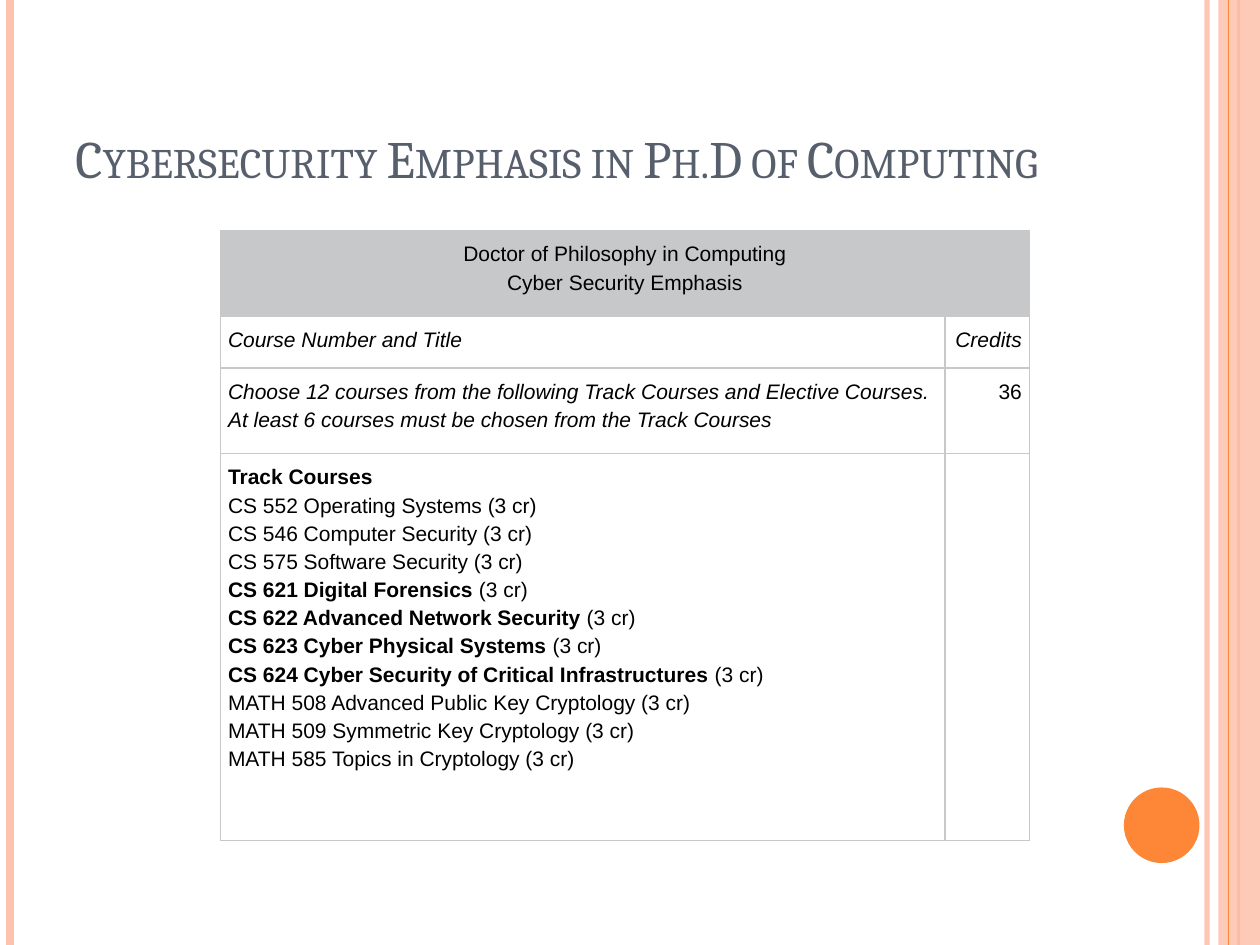
"""Build the slide on the cybersecurity emphasis of the doctoral programme."""
from pptx import Presentation
from pptx.dml.color import RGBColor
from pptx.enum.shapes import MSO_CONNECTOR, MSO_SHAPE
from pptx.enum.text import MSO_ANCHOR, PP_ALIGN
from pptx.oxml.ns import qn
from pptx.util import Inches, Pt
from lxml.etree import SubElement

COLORS = {
    "peach": "FEC3AE",
    "orange": "FE8637",
    "slate": "575F6D",
    "gray": "C6C8CA",
    "black": "000000",
}
HEADING = ["Doctor of Philosophy in Computing", "Cyber Security Emphasis"]
CHOICE = ("Choose 12 courses from the following Track Courses and Elective Courses. "
          "At least 6 courses must be chosen from the Track Courses")
COURSES = [
    ("CS 552 Operating Systems", False),
    ("CS 546 Computer Security", False),
    ("CS 575 Software Security", False),
    ("CS 621 Digital Forensics", True),
    ("CS 622 Advanced Network Security", True),
    ("CS 623 Cyber Physical Systems", True),
    ("CS 624 Cyber Security of Critical Infrastructures", True),
    ("MATH 508 Advanced Public Key Cryptology", False),
    ("MATH 509 Symmetric Key Cryptology", False),
    ("MATH 585 Topics in Cryptology", False),
]


def rgb(name):
    return RGBColor.from_string(COLORS[name])


def set_alpha(fill_xml, percent):
    SubElement(fill_xml.find(".//" + qn("a:srgbClr")), qn("a:alpha"), val=str(percent * 1000))


def add_rule(slide, x, color, width, alpha=100):
    line = slide.shapes.add_connector(
        MSO_CONNECTOR.STRAIGHT, Inches(x), 0, Inches(x), Inches(7.5))
    line.line.color.rgb = rgb(color)
    line.line.width = Pt(width)
    sp_pr = line._element.spPr
    if alpha < 100:
        set_alpha(sp_pr, alpha)
    SubElement(sp_pr, qn("a:effectLst"))


def add_block(slide, kind, box, color, alpha=100):
    sp = slide.shapes.add_shape(kind, *map(Inches, box))
    sp.shadow.inherit = False
    sp.fill.solid()
    sp.fill.fore_color.rgb = rgb(color)
    sp.line.fill.background()
    if alpha < 100:
        set_alpha(sp._element.spPr, alpha)


def add_run(p, text, size=12, font="Arial", color="black", bold=False, italic=False):
    r = p.add_run()
    r.text = text
    r.font.size = Pt(size)
    r.font.name = font
    r.font.color.rgb = rgb(color)
    r.font.bold = bold
    r.font.italic = italic
    return r


def add_title(slide, text):
    tb = slide.shapes.add_textbox(Inches(0.5), Inches(0.3), Inches(8.17), Inches(1.25))
    tf = tb.text_frame
    tf.word_wrap = True
    tf.vertical_anchor = MSO_ANCHOR.BOTTOM
    r = add_run(tf.paragraphs[0], text, 30, "Cambria", "slate")
    r.font._element.set("cap", "small")


def style_cell(cell, fill=None):
    cell.margin_left = cell.margin_right = Inches(0.06)
    cell.margin_top = cell.margin_bottom = Inches(0.06)
    tc_pr = cell._tc.get_or_add_tcPr()
    for side in ("lnL", "lnR", "lnT", "lnB"):
        ln = SubElement(tc_pr, qn("a:" + side), w=str(Pt(1)))
        solid = SubElement(ln, qn("a:solidFill"))
        SubElement(solid, qn("a:srgbClr"), val=COLORS["gray"])
    if fill:
        cell.fill.solid()
        cell.fill.fore_color.rgb = rgb(fill)
    else:
        cell.fill.background()


def fill_cell(cell, paragraphs, align=PP_ALIGN.LEFT):
    tf = cell.text_frame
    for i, runs in enumerate(paragraphs):
        p = tf.add_paragraph() if i else tf.paragraphs[0]
        p.alignment = align
        p.line_spacing = 1.2
        for text, style in runs:
            add_run(p, text, **style)


def course_runs(name, bold):
    if bold:
        return [(name + " ", {"bold": True}), ("(3 cr)", {})]
    return [(name + " (3 cr)", {})]


def add_course_table(slide):
    frame = slide.shapes.add_table(
        4, 2, Inches(1.75), Inches(1.83), Inches(6.42), Inches(4.84))
    table = frame.table
    table.first_row = table.horz_banding = False
    for col, width in zip(table.columns, (5.75, 0.67)):
        col.width = Inches(width)
    for row, height in zip(table.rows, (0.68, 0.41, 0.68, 3.07)):
        row.height = Inches(height)
    for i, row in enumerate(table.rows):
        for cell in row.cells:
            style_cell(cell, None if i else "gray")
    table.cell(0, 0).merge(table.cell(0, 1))

    italic = {"italic": True}
    tracks = [[("Track Courses", {"bold": True})]]
    tracks += [course_runs(*course) for course in COURSES]
    fill_cell(table.cell(0, 0), [[(text, {})] for text in HEADING], PP_ALIGN.CENTER)
    fill_cell(table.cell(1, 0), [[("Course Number and Title", italic)]])
    fill_cell(table.cell(1, 1), [[("Credits", italic)]], PP_ALIGN.RIGHT)
    fill_cell(table.cell(2, 0), [[(CHOICE, italic)]])
    fill_cell(table.cell(2, 1), [[("36", {})]], PP_ALIGN.RIGHT)
    fill_cell(table.cell(3, 0), tracks)


def main():
    prs = Presentation()
    prs.slide_width, prs.slide_height = Inches(10), Inches(7.5)
    slide = prs.slides.add_slide(prs.slide_layouts[6])
    add_rule(slide, 9.58, "peach", 3, 93)
    add_rule(slide, 0.08, "peach", 4.5)
    add_rule(slide, 9.83, "orange", 1.5)
    add_block(slide, MSO_SHAPE.RECTANGLE, (9.67, 0, 0.33, 7.5), "peach", 87)
    add_rule(slide, 9.75, "orange", 0.75)
    add_block(slide, MSO_SHAPE.OVAL, (8.92, 6.25, 0.6, 0.6), "orange")
    add_title(slide, "Cybersecurity Emphasis in Ph.D of Computing")
    add_course_table(slide)
    prs.save("out.pptx")


if __name__ == "__main__":
    main()
